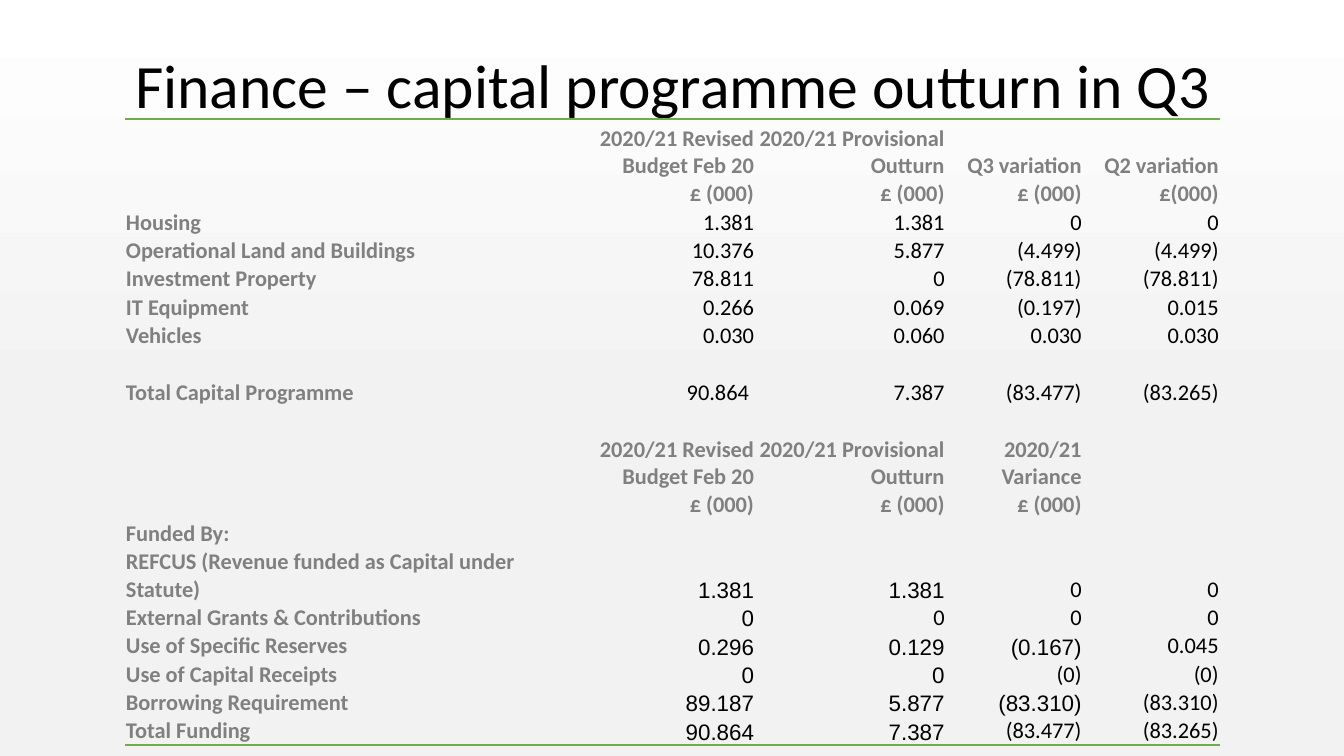
from lxml import etree
from pptx import Presentation
from pptx.dml.color import RGBColor
from pptx.enum.text import MSO_ANCHOR, PP_ALIGN
from pptx.oxml.ns import qn
from pptx.util import Pt


def color(value):
    return RGBColor.from_string(value)


def border(cell, side, value):
    ln = etree.Element(qn(f"a:{side}"), w=str(Pt(1)))
    fill = etree.SubElement(ln, qn("a:solidFill"))
    etree.SubElement(fill, qn("a:srgbClr"), val=value)
    cell._tc.get_or_add_tcPr().insert(0, ln)


GREEN, GREY, BLACK = "70AD47", "808080", "000000"
BUDGET, OUTTURN = "2020/21 Revised Budget Feb 20", "2020/21 Provisional Outturn"
REFCUS = "REFCUS (Revenue funded as Capital under Statute)"

rows = [
    ["", BUDGET, OUTTURN, "Q3 variation", "Q2 variation"],
    ["", "£ (000)", "£ (000)", "£ (000)", "£(000)"],
    ["Housing", "1.381", "1.381", "0", "0"],
    ["Operational Land and Buildings", "10.376", "5.877", "(4.499)", "(4.499)"],
    ["Investment Property", "78.811", "0", "(78.811)", "(78.811)"],
    ["IT Equipment", "0.266", "0.069", "(0.197)", "0.015"],
    ["Vehicles", "0.030", "0.060", "0.030", "0.030"],
    [""] * 5,
    ["Total Capital Programme", "90.864\N{NO-BREAK SPACE}", "7.387", "(83.477)", "(83.265)"],
    [""] * 5,
    ["", BUDGET, OUTTURN, "2020/21 Variance", ""],
    ["", "£ (000)", "£ (000)", "£ (000)", ""],
    ["Funded By:", "", "", "", ""],
    [REFCUS, "1.381", "1.381", "0", "0"],
    ["External Grants & Contributions", "0", "0", "0", "0"],
    ["Use of Specific Reserves", "0.296", "0.129", "(0.167)", "0.045"],
    ["Use of Capital Receipts", "0", "0", "(0)", "(0)"],
    ["Borrowing Requirement", "89.187", "5.877", "(83.310)", "(83.310)"],
    ["Total Funding", "90.864", "7.387", "(83.477)", "(83.265)"],
]
header_rows = (0, 1, 10, 11)
two_line_rows = {0: 43.2, 10: 37.4, 13: 37.4}
# Last column set in Arial, by row
arial_until = {13: 2, 14: 1, 15: 3, 16: 2, 17: 3, 18: 2}
col_widths = [320.4, 129.6, 136.1, 97.9, 97.9]

prs = Presentation()
prs.slide_width, prs.slide_height = Pt(960), Pt(540)
s = prs.slides.add_slide(prs.slide_layouts[5])

# Background: white fading to light grey
bg = s.background.fill
bg.gradient()
bg.gradient_angle = 270
for stop, value, position in zip(bg.gradient_stops, ("FFFFFF", "F2F2F2"), (0, 0.54)):
    stop.color.rgb = color(value)
    stop.position = position

# Title
title = s.shapes.title
title.left, title.top, title.width, title.height = Pt(89.3), Pt(10.8), Pt(828), Pt(104.4)
tf = title.text_frame
tf.text = "Finance – capital programme outturn in Q3"
tf.vertical_anchor = MSO_ANCHOR.MIDDLE
p = tf.paragraphs[0]
p.alignment = PP_ALIGN.LEFT
p.line_spacing = 0.9
p.font.size, p.font.name = Pt(44), "Calibri"
p.font.color.rgb = color(BLACK)

# Table without style, fills or grid
table = s.shapes.add_table(len(rows), len(col_widths), Pt(89.3), Pt(85),
                           Pt(sum(col_widths)), Pt(439)).table
table.first_row = table.horz_banding = False
style = table._tbl.tblPr.find(qn("a:tableStyleId"))
style.text = "{2D5ABB26-0587-4C30-8999-92F81FD0307C}"
for column, width in zip(table.columns, col_widths):
    column.width = Pt(width)

# Cells
for i, texts in enumerate(rows):
    table.rows[i].height = Pt(two_line_rows.get(i, 19.4))
    for j, text in enumerate(texts):
        cell = table.cell(i, j)
        cell.fill.background()
        cell.margin_left = cell.margin_right = cell.margin_top = Pt(0.7)
        cell.margin_bottom = 0
        cell.vertical_anchor = MSO_ANCHOR.BOTTOM
        label = j == 0 or i in header_rows
        p = cell.text_frame.paragraphs[0]
        p.alignment = PP_ALIGN.RIGHT if j else PP_ALIGN.LEFT
        p.font.size = Pt(16)
        p.font.name = "Arial" if 0 < j <= arial_until.get(i, 0) else "Calibri"
        p.font.bold = label
        p.font.color.rgb = color(GREY if label else BLACK)
        if text:
            p.add_run().text = text
        else:
            etree.SubElement(p._p, qn("a:endParaRPr"), sz="1600")
        if i == 0:
            border(cell, "lnT", GREEN)
        if i == len(rows) - 1:
            border(cell, "lnB", GREEN)

prs.save("out.pptx")
